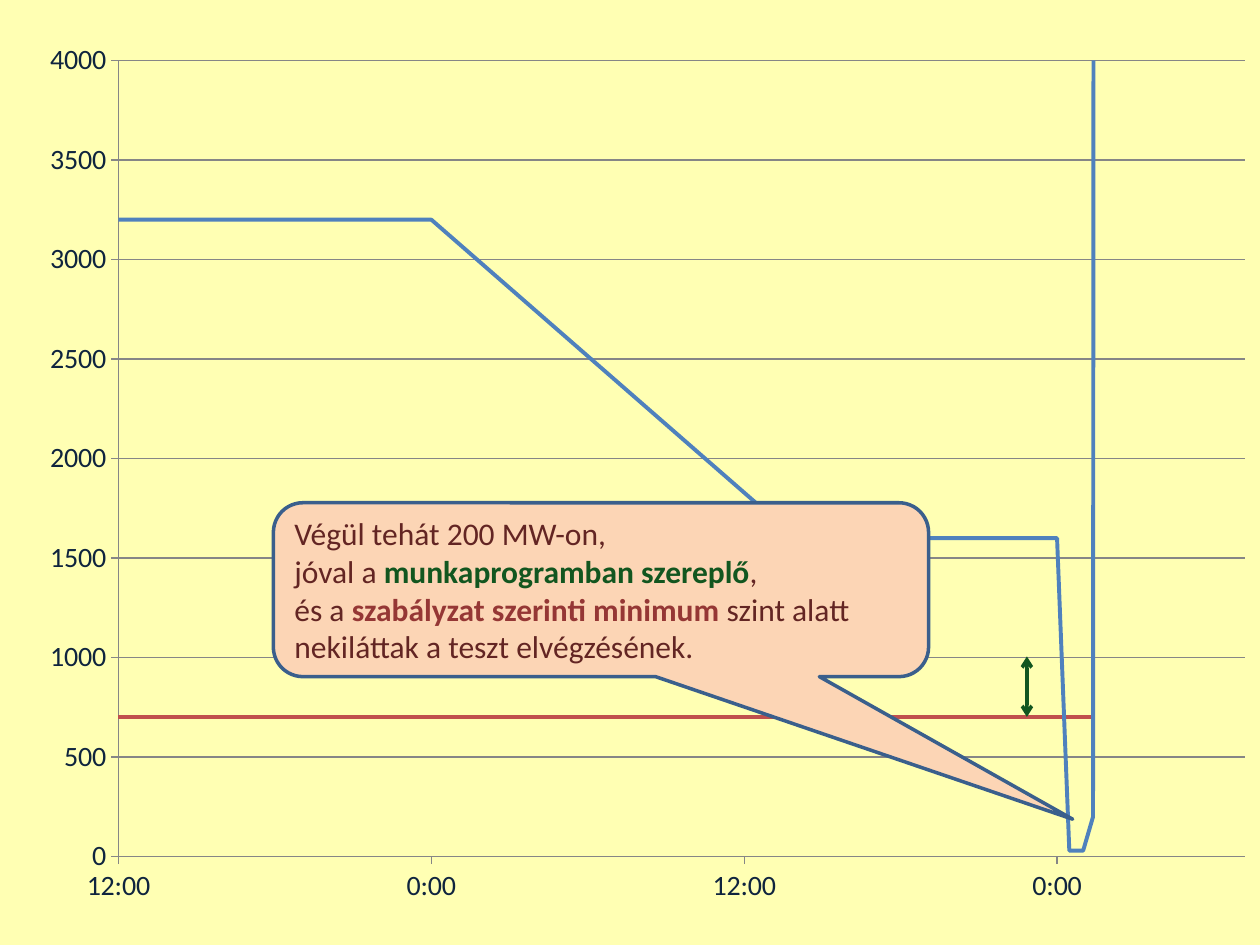
from lxml.etree import SubElement
from pptx import Presentation
from pptx.chart.data import XyChartData
from pptx.dml.color import RGBColor
from pptx.enum.chart import XL_CHART_TYPE, XL_TICK_LABEL_POSITION, XL_TICK_MARK
from pptx.enum.shapes import MSO_CONNECTOR, MSO_SHAPE
from pptx.enum.text import MSO_ANCHOR, PP_ALIGN
from pptx.oxml.ns import qn
from pptx.util import Inches, Pt


def color(code):
    return RGBColor.from_string(code)


def add_run(para, text, ink="632523", bold=False):
    span = para.add_run()
    span.text = text
    span.font.name = "Calibri"
    span.font.size = Pt(18)
    span.font.bold = bold
    span.font.color.rgb = color(ink)


deck = Presentation()
deck.slide_width, deck.slide_height = Inches(10), Inches(7.5)
page = deck.slides.add_slide(deck.slide_layouts[6])
page.background.fill.solid()
page.background.fill.fore_color.rgb = color("FFFFB3")

# Power over time: hours are counted from noon on the first day
FIRST_NOON = 31526.5
hours = [0, 12, 26, 35, 36, 36.47, 37, 37.38, 37.4]
power = [3200, 3200, 1600, 1600, 1600, 30, 30, 200, 5000]
minimum = [700] * len(hours)
data = XyChartData()
for name, values in (("Series 1", power), ("Series 2", minimum)):
    series = data.add_series(name)
    for hour, value in zip(hours, values):
        series.add_data_point(FIRST_NOON + hour / 24, value)

chart_width, chart_height = 9.88, 7.11
chart = page.shapes.add_chart(
    XL_CHART_TYPE.XY_SCATTER_LINES_NO_MARKERS, Inches(0.2), Inches(0.21),
    Inches(chart_width), Inches(chart_height), data).chart
chart.has_legend = False
chart.has_title = False
chart.font.name = "Calibri"
chart.font.size = Pt(10)
chart.plots[0].vary_by_categories = False
for series, ink in zip(chart.plots[0].series, ("4F81BD", "C0504D")):
    series.smooth = False
    series.format.line.width = Pt(2.25)
    series.format.line.color.rgb = color(ink)

time_axis, power_axis = chart.category_axis, chart.value_axis
for axis, low, high, step, number_format in (
        (time_axis, FIRST_NOON, 31528.3, 0.5, "h:mm;@"),
        (power_axis, 0, 4000, 500, "General")):
    axis.minimum_scale, axis.maximum_scale, axis.major_unit = low, high, step
    axis.major_tick_mark = XL_TICK_MARK.OUTSIDE
    axis.minor_tick_mark = XL_TICK_MARK.NONE
    axis.tick_label_position = XL_TICK_LABEL_POSITION.LOW
    axis.tick_labels.number_format = number_format
    axis.tick_labels.number_format_is_linked = False
    axis.tick_labels.font.name = "Calibri"
    axis.tick_labels.font.size = Pt(16)
    axis.tick_labels.font.color.rgb = color("0F243E")
    axis.format.line.color.rgb = color("868686")
    axis.format.line.width = Pt(0.75)
time_axis.has_major_gridlines = False
power_axis.has_major_gridlines = True
power_axis.major_gridlines.format.line.color.rgb = color("868686")
power_axis.major_gridlines.format.line.width = Pt(0.75)

# Fixed inner plot area, as fractions of the chart
plot_area = chart.plots[0]._element.getparent()
layout = plot_area.find(qn("c:layout"))
if layout is None:
    layout = SubElement(plot_area, qn("c:layout"))
    plot_area.insert(0, layout)
manual = SubElement(layout, qn("c:manualLayout"))
for tag, value in (("layoutTarget", "inner"), ("xMode", "edge"), ("yMode", "edge"),
                   ("x", 0.74 / chart_width), ("y", 0.27 / chart_height),
                   ("w", 8.94 / chart_width), ("h", 6.32 / chart_height)):
    SubElement(manual, qn(f"c:{tag}")).set("val", str(value))

# Callout pointing at the level of the test
callout = page.shapes.add_shape(
    MSO_SHAPE.ROUNDED_RECTANGULAR_CALLOUT,
    Inches(2.17), Inches(3.99), Inches(5.2), Inches(1.38))
callout.shadow.inherit = False
for index, value in enumerate((0.72, 1.32, 0.17)):
    callout.adjustments[index] = value
callout.fill.solid()
callout.fill.fore_color.rgb = color("FCD5B5")
callout.line.color.rgb = color("3A5F8C")
callout.line.width = Pt(2)
frame = callout.text_frame
frame.word_wrap = True
frame.vertical_anchor = MSO_ANCHOR.MIDDLE
lines = [
    [("Végül tehát 200 MW-on,", {})],
    [("jóval a ", {}),
     ("munkaprogramban szereplő", {"ink": "12561F", "bold": True}),
     (",", {})],
    [("és a ", {}),
     ("szabályzat szerinti minimum", {"ink": "953735", "bold": True}),
     (" szint alatt nekiláttak a teszt elvégzésének.", {})],
]
for index, line in enumerate(lines):
    para = frame.add_paragraph() if index else frame.paragraphs[0]
    para.alignment = PP_ALIGN.LEFT
    for text, style in line:
        add_run(para, text, **style)

# Gap between the planned level and the minimum
gap = page.shapes.add_connector(
    MSO_CONNECTOR.STRAIGHT, Inches(8.15), Inches(5.21), Inches(8.15), Inches(5.69))
gap.line.color.rgb = color("12561F")
gap.line.width = Pt(2)
outline = gap.line._get_or_add_ln()
for end in ("a:headEnd", "a:tailEnd"):
    SubElement(outline, qn(end)).set("type", "arrow")
SubElement(gap._element.spPr, qn("a:effectLst"))

deck.save("out.pptx")
